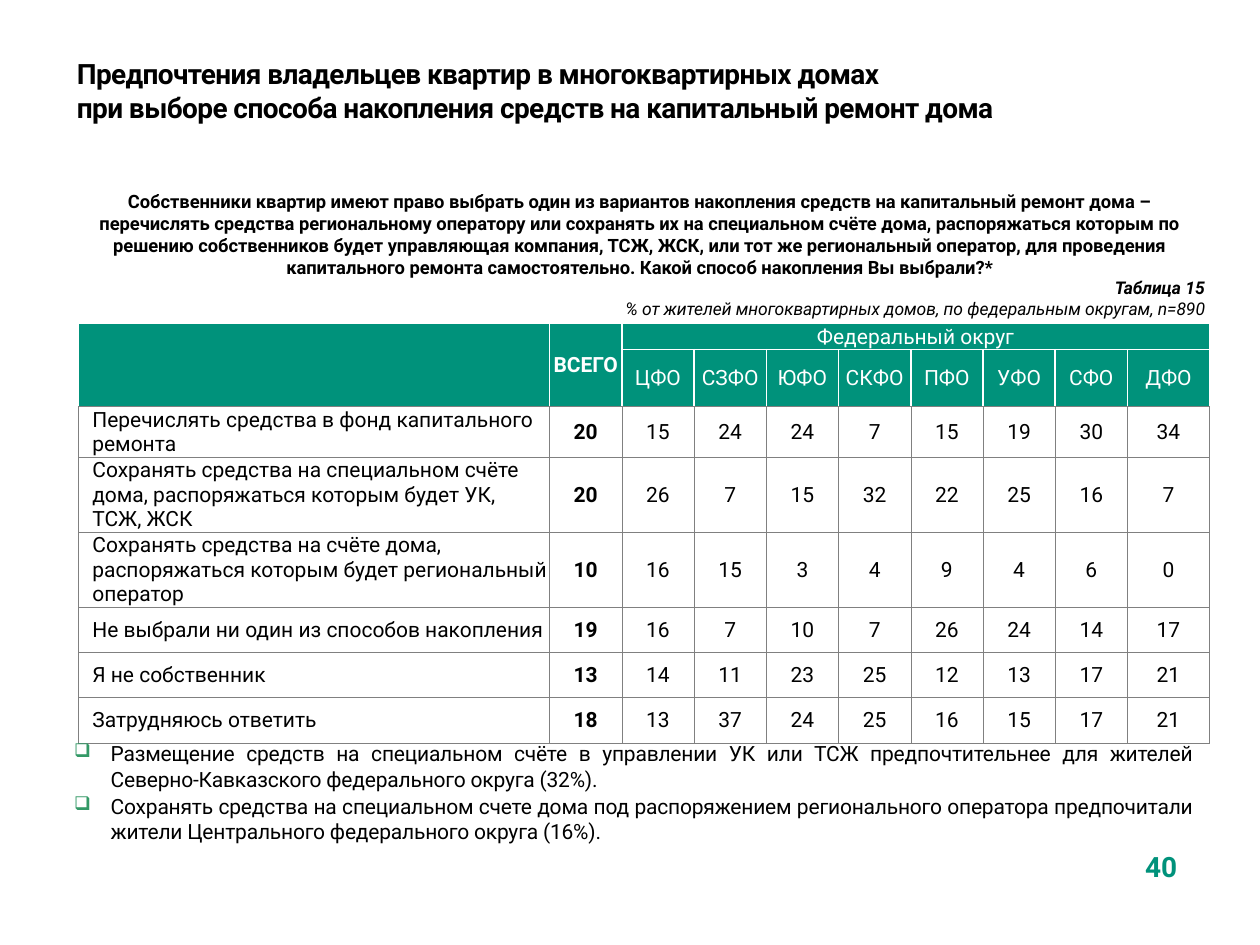
"""Build the slide on how flat owners save for major repairs."""
import dataclasses
import typing

import lxml.etree
import pptx
import pptx.dml.color
import pptx.enum.text
import pptx.oxml.ns
import pptx.util

Pt = pptx.util.Pt
qn = pptx.oxml.ns.qn
Align = pptx.enum.text.PP_ALIGN
Anchor = pptx.enum.text.MSO_ANCHOR


@dataclasses.dataclass(frozen=True)
class Theme:
    font: str = "Roboto"
    ink: str = "000000"
    white: str = "FFFFFF"
    green: str = "00927B"
    mark: str = "339966"
    grid: str = "808080"
    head: float = 16
    body: float = 12
    ask: float = 10.5
    note: float = 10


@dataclasses.dataclass(frozen=True)
class Style:
    size: float
    color: str
    bold: bool = False
    slant: bool = False
    space: int = 0
    align: Align = Align.LEFT


@dataclasses.dataclass(frozen=True)
class Block:
    left: float
    top: float
    width: float
    height: float
    lines: tuple[str, ...]
    styles: tuple[Style, ...]
    anchor: Anchor = Anchor.TOP
    base: float = 3.6
    marked: bool = False


class Row(typing.NamedTuple):
    label: str
    total: int
    shares: tuple[int, ...]


THEME = Theme()
TITLE = Block(
    36.7, 25.9, 561.6, 51.1,
    ("Предпочтения владельцев квартир в многоквартирных домах\v"
     "при выборе способа накопления средств на капитальный ремонт дома",),
    (Style(THEME.head, THEME.ink, bold=True, space=-30),), Anchor.MIDDLE)
POINT = Style(THEME.body, THEME.ink, space=-10, align=Align.JUSTIFY)
NOTE = Style(THEME.note, THEME.ink, slant=True, align=Align.RIGHT)
BLOCKS = (
    Block(35.3, 419.8, 653.8, 79.2,
          ("Размещение средств на специальном счёте в управлении УК или ТСЖ "
           "предпочтительнее для жителей Северно-Кавказского федерального округа (32%).",
           "Сохранять средства на специальном счете дома под распоряжением регионального "
           "оператора предпочитали жители Центрального федерального округа (16%)."),
          (POINT, POINT), marked=True),
    Block(0.7, 154.1, 694.8, 42.5,
          ("Таблица 15",
           "% от жителей многоквартирных домов, по федеральным округам, n=890"),
          (dataclasses.replace(NOTE, bold=True), NOTE), Anchor.BOTTOM, base=14.2),
    Block(632.2, 481.7, 62.6, 37.4, ("40",),
          (Style(THEME.head, THEME.green, bold=True, align=Align.CENTER),)),
    Block(36.7, 104.4, 658.1, 58.3,
          ("Собственники квартир имеют право выбрать один из вариантов накопления средств "
           "на капитальный ремонт дома – перечислять средства региональному оператору или "
           "сохранять их на специальном счёте дома, распоряжаться которым по решению "
           "собственников будет управляющая компания, ТСЖ, ЖСК, или тот же региональный "
           "оператор, для проведения капитального ремонта самостоятельно. Какой способ "
           "накопления Вы выбрали?*",),
          (Style(THEME.ask, THEME.ink, bold=True, align=Align.CENTER),), Anchor.BOTTOM),
)
AREAS = ("ЦФО", "СЗФО", "ЮФО", "СКФО", "ПФО", "УФО", "СФО", "ДФО")
ROWS = (
    Row("Перечислять средства в фонд капитального ремонта",
        20, (15, 24, 24, 7, 15, 19, 30, 34)),
    Row("Сохранять средства на специальном счёте дома, распоряжаться которым будет УК, ТСЖ, ЖСК",
        20, (26, 7, 15, 32, 22, 25, 16, 7)),
    Row("Сохранять средства на счёте дома, распоряжаться которым будет региональный оператор",
        10, (16, 15, 3, 4, 9, 4, 6, 0)),
    Row("Не выбрали ни один из способов накопления",
        19, (16, 7, 10, 7, 26, 24, 14, 17)),
    Row("Я не собственник", 13, (14, 11, 23, 25, 12, 13, 17, 21)),
    Row("Затрудняюсь ответить", 18, (13, 37, 24, 25, 16, 15, 17, 21)),
)
WIDTHS = (269.2, *[41.3] * 8, 46.9)
HEIGHTS = (14.4, 32.4, *[25.9] * len(ROWS))


def rgb(color: str) -> pptx.dml.color.RGBColor:
    """Turn a hex string into a colour."""
    return pptx.dml.color.RGBColor.from_string(color)


def format_par(par: typing.Any, style: Style) -> None:
    """Apply a style to a paragraph and its runs."""
    par.alignment = style.align
    for run in par.runs:
        font = run.font
        font.name, font.size = THEME.font, Pt(style.size)
        font.bold, font.italic = style.bold, style.slant
        font.color.rgb = rgb(style.color)
        if style.space:
            run._r.get_or_add_rPr().set("spc", str(style.space))


def add_mark(par: typing.Any) -> None:
    """Give a paragraph a hanging box bullet."""
    props = par._p.get_or_add_pPr()
    props.set("marL", str(Pt(20.9)))
    props.set("indent", str(-Pt(20.9)))
    tint = lxml.etree.SubElement(props, qn("a:buClr"))
    lxml.etree.SubElement(tint, qn("a:srgbClr"), val=THEME.mark)
    lxml.etree.SubElement(props, qn("a:buSzPct"), val="90000")
    lxml.etree.SubElement(props, qn("a:buChar"), char="❑")


def fill_block(shape: typing.Any, block: Block) -> None:
    """Place a text shape and write its lines."""
    shape.left, shape.top = Pt(block.left), Pt(block.top)
    shape.width, shape.height = Pt(block.width), Pt(block.height)
    frame = shape.text_frame
    frame.text = "\n".join(block.lines)
    frame.word_wrap = True
    frame.auto_size = pptx.enum.text.MSO_AUTO_SIZE.NONE
    frame.vertical_anchor = block.anchor
    frame.margin_bottom = Pt(block.base)
    for rank, (par, style) in enumerate(zip(frame.paragraphs, block.styles)):
        if block.marked:
            add_mark(par)
            if rank:
                par.space_before = Pt(1.2)
        format_par(par, style)


def add_edge(cell: typing.Any, side: str, color: str, width: float) -> None:
    """Draw one border of a cell."""
    props = cell._tc.get_or_add_tcPr()
    line = lxml.etree.SubElement(props, qn(f"a:ln{side}"), w=str(Pt(width)))
    paint = lxml.etree.SubElement(line, qn("a:solidFill"))
    lxml.etree.SubElement(paint, qn("a:srgbClr"), val=color)


def fill_cell(cell: typing.Any, text: str, row: int, col: int) -> None:
    """Write and format one cell by its place in the grid."""
    top = row < 2
    for side in "LRTB":
        light = top and not (side == "B" and (row == 1 or col < 2))
        add_edge(cell, side, THEME.white if light else THEME.grid, 1 if light else 0.25)
    cell.fill.solid()
    cell.fill.fore_color.rgb = rgb(THEME.green if top else THEME.white)
    cell.margin_left = cell.margin_right = cell.margin_top = Pt(0.7)
    cell.margin_bottom = 0
    cell.vertical_anchor = Anchor.MIDDLE
    cell.text_frame.text = text
    par = cell.text_frame.paragraphs[0]
    label = col == 0 and not top
    if label:
        par._p.get_or_add_pPr().set("marL", str(Pt(7.2)))
    format_par(par, Style(THEME.body, THEME.white if top else THEME.ink, bold=col == 1,
                          align=Align.LEFT if label else Align.CENTER))
    if not text:
        lxml.etree.SubElement(par._p, qn("a:endParaRPr"), sz=str(THEME.body * 100))


def add_grid(slide: typing.Any) -> None:
    """Add the table of answers by district."""
    gaps = [""] * (len(AREAS) - 1)
    data = [["", "ВСЕГО", "Федеральный округ", *gaps], ["", "", *AREAS]]
    data += [[row.label, str(row.total), *map(str, row.shares)] for row in ROWS]
    table = slide.shapes.add_table(len(data), len(WIDTHS), Pt(44.9), Pt(185),
                                   Pt(sum(WIDTHS)), Pt(sum(HEIGHTS))).table
    table.first_row = table.horz_banding = False
    for col, width in zip(table.columns, WIDTHS):
        col.width = Pt(width)
    for row, height in zip(table.rows, HEIGHTS):
        row.height = Pt(height)
    for row, texts in enumerate(data):
        for col, text in enumerate(texts):
            fill_cell(table.cell(row, col), text, row, col)
    for start, end in (((0, 0), (1, 0)), ((0, 1), (1, 1)), ((0, 2), (0, len(WIDTHS) - 1))):
        table.cell(*start).merge(table.cell(*end))


def main() -> None:
    """Build and save the deck."""
    deck = pptx.Presentation()
    deck.slide_width, deck.slide_height = Pt(720), Pt(540)
    slide = deck.slides.add_slide(deck.slide_layouts[5])
    fill_block(slide.shapes.title, TITLE)
    add_grid(slide)
    for block in BLOCKS:
        fill_block(slide.shapes.add_textbox(0, 0, 0, 0), block)
    deck.save("out.pptx")


if __name__ == "__main__":
    main()
